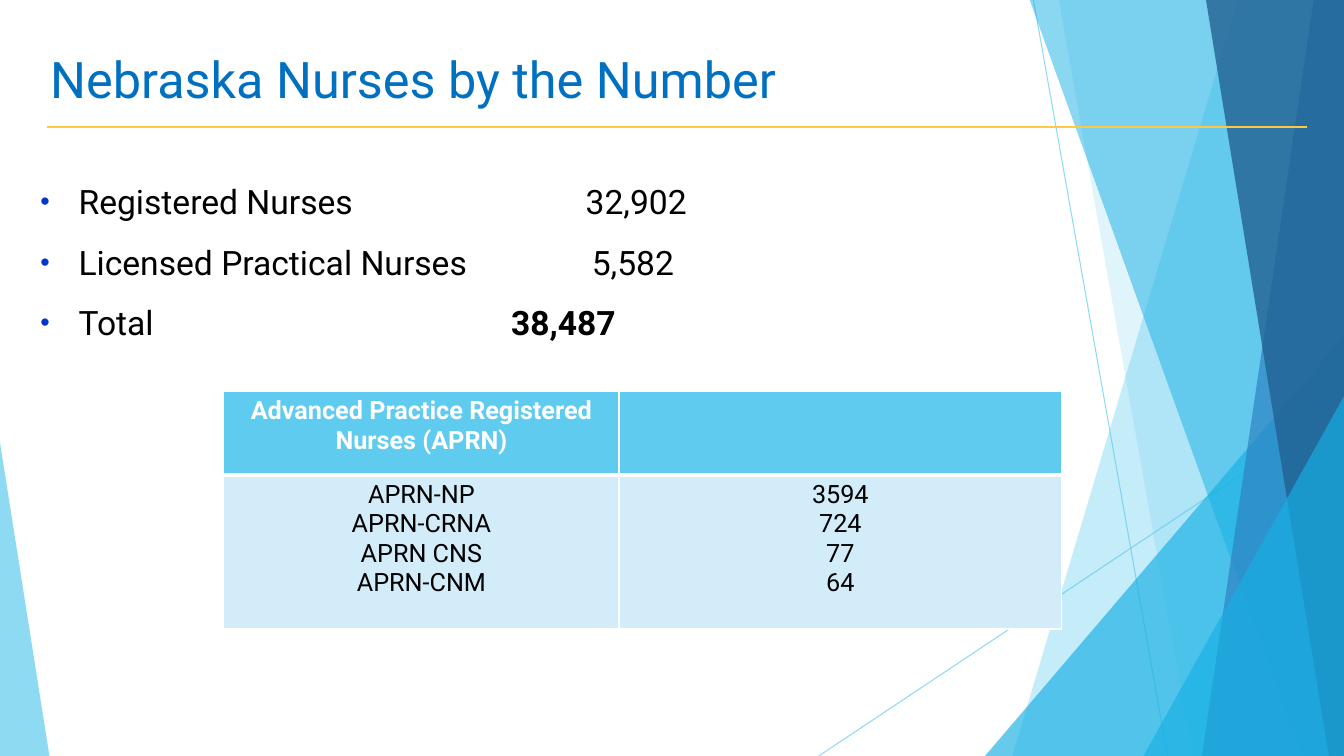
from lxml.etree import SubElement
from pptx import Presentation
from pptx.dml.color import RGBColor
from pptx.enum.shapes import MSO_CONNECTOR as CONNECTOR, MSO_SHAPE as SHAPE
from pptx.enum.text import MSO_ANCHOR as ANCHOR, PP_ALIGN as ALIGN
from pptx.oxml.ns import qn
from pptx.util import Pt

PX = 9144
FONT = "Roboto"
WIDTH, HEIGHT = 1333, 750
SKY, CYAN, WHITE, BLACK = "5FCBEF", "17B0E4", "FFFFFF", "000000"

RAYS = [((1025, 0), (1158, 750)), ((1333, 403), (812, 750))]
BANDS = [
    (1228, 1004, SKY, 36),
    (1050, 1183, SKY, 20),
    ((977, 333, 356, 417), 1, CYAN, 66),
    (1021, 1291, CYAN, 50),
    (1303, 1192, "2E83C3", 70),
    (1196, 1318, "226292", 80),
    ((1134, 393, 199, 357), 1, CYAN, 66),
    ((0, 439, 49, 311), 0, SKY, 70),
]
NURSE_COUNTS = [
    ("Registered Nurses", "32,902", 541, False),
    ("Licensed Practical Nurses", "5,582", 547, False),
    ("Total", "38,487", 467, True),
]
APRN_ROWS = [
    ("Advanced Practice Registered Nurses (APRN)", ""),
    ("APRN-NP\nAPRN-CRNA\nAPRN CNS\nAPRN-CNM", "3594\n724\n77\n64"),
]


def emu(*lengths):
    return [length * PX for length in lengths]


def color(value):
    return RGBColor.from_string(value)


def set_alpha(element, percent):
    SubElement(next(element.iter(qn("a:srgbClr"))), qn("a:alpha"), val=str(percent * 1000))


def add_line(slide, start, end, line_color, width, alpha=100):
    line = slide.shapes.add_connector(CONNECTOR.STRAIGHT, *emu(*start, *end))
    line.line.color.rgb = color(line_color)
    line.line.width = Pt(width)
    properties = line._element.spPr
    set_alpha(properties, alpha)
    SubElement(properties, qn("a:effectLst"))


def paint(shape, fill_color, alpha):
    shape.shadow.inherit = False
    shape.fill.solid()
    shape.fill.fore_color.rgb = color(fill_color)
    set_alpha(shape._element.spPr, alpha)
    shape.line.fill.background()


def add_edge_band(slide, top_x, bottom_x, fill_color, alpha):
    builder = slide.shapes.build_freeform(top_x, -1, scale=PX)
    builder.add_line_segments([(WIDTH, -1), (WIDTH, HEIGHT), (bottom_x, HEIGHT)], close=True)
    paint(builder.convert_to_shape(), fill_color, alpha)


def add_triangle(slide, box, apex, fill_color, alpha):
    triangle = slide.shapes.add_shape(SHAPE.ISOSCELES_TRIANGLE, *emu(*box))
    triangle.adjustments[0] = apex
    paint(triangle, fill_color, alpha)


def style_run(run, size, font_color, bold=False):
    run.font.name = FONT
    run.font.size = Pt(size)
    run.font.bold = bold
    run.font.color.rgb = color(font_color)


def add_text_frame(slide, *box):
    text_frame = slide.shapes.add_textbox(*emu(*box)).text_frame
    text_frame.word_wrap = True
    return text_frame


def add_title(slide, text):
    text_frame = add_text_frame(slide, 40, 40, 1263, 76)
    text_frame.vertical_anchor = ANCHOR.MIDDLE
    text_frame.text = text
    style_run(text_frame.paragraphs[0].runs[0], 36, "0070C0")


def add_bullet(paragraph, tab):
    properties = paragraph._p.get_or_add_pPr()
    properties.set("marL", str(38 * PX))
    properties.set("indent", str(-38 * PX))
    bullet_color = SubElement(properties, qn("a:buClr"))
    SubElement(bullet_color, qn("a:srgbClr"), val="0036C9")
    SubElement(properties, qn("a:buSzPct"), val="80000")
    SubElement(properties, qn("a:buFont"), typeface="Arial")
    SubElement(properties, qn("a:buChar"), char="•")
    tabs = SubElement(properties, qn("a:tabLst"))
    SubElement(tabs, qn("a:tab"), pos=str(tab * PX), algn="l")


def add_counts(slide, counts):
    text_frame = add_text_frame(slide, 40, 155, 1263, 586)
    text_frame.margin_left = 0
    text_frame.text = "\n".join(f"{label}\t" for label, *_ in counts)
    for paragraph, (_, count, tab, bold) in zip(text_frame.paragraphs, counts):
        paragraph.line_spacing = 1.5
        add_bullet(paragraph, tab)
        style_run(paragraph.runs[0], 24, BLACK)
        number = paragraph.add_run()
        number.text = count
        style_run(number, 24, BLACK, bold)


def set_borders(cell, widths):
    properties = cell._tc.get_or_add_tcPr()
    for index, (side, width) in enumerate(zip("LRTB", widths)):
        border = properties.makeelement(qn(f"a:ln{side}"), {"w": str(Pt(width))})
        fill = SubElement(border, qn("a:solidFill"))
        SubElement(fill, qn("a:srgbClr"), val=WHITE)
        properties.insert(index, border)


def fill_cell(cell, text, is_header):
    cell.fill.solid()
    cell.fill.fore_color.rgb = color(SKY if is_header else "D2ECF9")
    set_borders(cell, (1, 1, 1, 3) if is_header else (1, 1, 3, 1))
    cell.text_frame.text = text
    for paragraph in cell.text_frame.paragraphs:
        paragraph.alignment = ALIGN.CENTER
        for run in paragraph.runs:
            style_run(run, 18, WHITE if is_header else BLACK, is_header)


def add_aprn_table(slide, rows):
    table = slide.shapes.add_table(2, 2, *emu(222, 388, 831, 236)).table
    for column, width in zip(table.columns, emu(392, 439)):
        column.width = width
    for row, height in zip(table.rows, emu(83, 153)):
        row.height = height
    for row_index, texts in enumerate(rows):
        for column_index, text in enumerate(texts):
            fill_cell(table.cell(row_index, column_index), text, row_index == 0)


def add_backdrop(slide):
    for start, end in RAYS:
        add_line(slide, start, end, SKY, 0.75, 70)
    for band in BANDS:
        draw = add_triangle if isinstance(band[0], tuple) else add_edge_band
        draw(slide, *band)


def main():
    presentation = Presentation()
    presentation.slide_width, presentation.slide_height = emu(WIDTH, HEIGHT)
    slide = presentation.slides.add_slide(presentation.slide_layouts[6])
    add_backdrop(slide)
    add_line(slide, (47, 126), (1296, 126), "FFC843", 1.25)
    add_title(slide, "Nebraska Nurses by the Number")
    add_counts(slide, NURSE_COUNTS)
    add_aprn_table(slide, APRN_ROWS)
    presentation.save("out.pptx")


if __name__ == "__main__":
    main()
